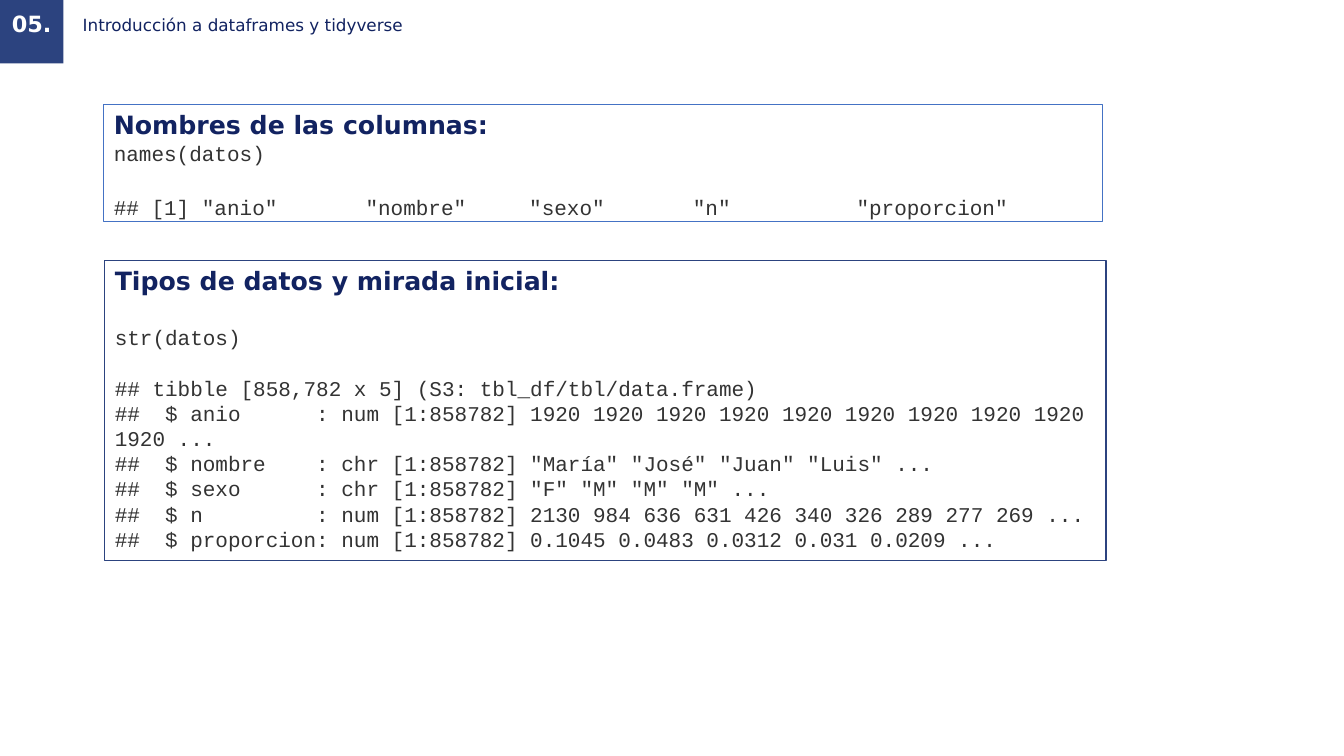
from pptx import Presentation
from pptx.dml.color import RGBColor
from pptx.enum.shapes import MSO_SHAPE
from pptx.enum.text import MSO_ANCHOR, MSO_AUTO_SIZE, PP_ALIGN
from pptx.util import Inches, Pt

NAVY, BLUE, ACCENT, GREY, WHITE = "122361", "2C437F", "4472C4", "333333", "FFFFFF"
HEADING = dict(name="DejaVu Sans", size=Pt(18), bold=True, color=NAVY)
CODE = dict(name="Courier New", size=Pt(15), bold=False, color=GREY)

NAMES_CODE = [
    ("names(datos)", 0),
    ('## [1] "anio"       "nombre"     "sexo"       "n"          "proporcion"', 21),
]
STR_CODE = [
    ("str(datos)", 21),
    ("## tibble [858,782 x 5] (S3: tbl_df/tbl/data.frame)", 18),
    ("##  $ anio      : num [1:858782] 1920 1920 1920 1920 1920 1920 1920 1920 1920 1920 ...", 0),
    ('##  $ nombre    : chr [1:858782] "María" "José" "Juan" "Luis" ...', 0),
    ('##  $ sexo      : chr [1:858782] "F" "M" "M" "M" ...', 0),
    ("##  $ n         : num [1:858782] 2130 984 636 631 426 340 326 289 277 269 ...", 0),
    ("##  $ proporcion: num [1:858782] 0.1045 0.0483 0.0312 0.031 0.0209 ...", 0),
]


def rgb(value):
    """Return the colour for a hex string."""
    return RGBColor.from_string(value)


def add_text(p, text, fmt):
    """Add a run to a paragraph and format it."""
    r = p.add_run()
    r.text = text
    for key, value in fmt.items():
        if key == "color":
            r.font.color.rgb = rgb(value)
        else:
            setattr(r.font, key, value)


def set_frame(tf, **fmt):
    """Set wrapping, no autofit and further text frame values."""
    for key, value in dict(word_wrap=True, auto_size=MSO_AUTO_SIZE.NONE, **fmt).items():
        setattr(tf, key, value)


def add_rect(s, left, top, width, height):
    """Add a rectangle without shadow."""
    sp = s.shapes.add_shape(MSO_SHAPE.RECTANGLE, Inches(left), Inches(top),
                            Inches(width), Inches(height))
    sp.shadow.inherit = False
    return sp


def add_header(s, left, top, side, number, title):
    """Place the numbered square and the slide title beside it."""
    sp = add_rect(s, left, top, side, side)
    sp.fill.solid()
    sp.fill.fore_color.rgb = rgb(BLUE)
    sp.line.fill.background()
    tf = sp.text_frame
    set_frame(tf, vertical_anchor=MSO_ANCHOR.MIDDLE, margin_top=0, margin_bottom=Inches(0.13))
    p = tf.paragraphs[0]
    p.alignment, p.line_spacing = PP_ALIGN.CENTER, 0.9
    add_text(p, number, dict(HEADING, size=Pt(16), color=WHITE))

    ph = s.shapes.title
    ph.left, ph.top = Inches(left + 0.82), Inches(top - 0.01)
    ph.width, ph.height = Inches(11.91), Inches(0.54)
    set_frame(ph.text_frame, vertical_anchor=MSO_ANCHOR.MIDDLE, margin_left=0)
    p = ph.text_frame.paragraphs[0]
    p.alignment, p.line_spacing = PP_ALIGN.LEFT, 0.9
    add_text(p, title, dict(HEADING, size=Pt(12), bold=False))


def add_code_box(s, left, top, width, height, line, heading, code):
    """Place an outlined box with a heading and lines of code."""
    sp = add_rect(s, left, top, width, height)
    sp.fill.background()
    sp.line.color.rgb = rgb(line)
    sp.line.width = Pt(0.75)
    tf = sp.text_frame
    set_frame(tf, vertical_anchor=MSO_ANCHOR.TOP)
    p = tf.paragraphs[0]
    p.alignment = PP_ALIGN.LEFT
    add_text(p, heading, HEADING)
    for text, gap in code:
        p = tf.add_paragraph()
        p.alignment, p.space_before = PP_ALIGN.LEFT, Pt(gap)
        add_text(p, text, CODE)


def main():
    """Build and save the slide."""
    prs = Presentation()
    prs.slide_width, prs.slide_height = Inches(13.33), Inches(7.5)
    s = prs.slides.add_slide(prs.slide_layouts[5])
    add_header(s, 0, 0, 0.63, "05.", "Introducción a dataframes y tidyverse")
    add_code_box(s, 1.03, 1.04, 9.91, 1.16, ACCENT, "Nombres de las columnas:", NAMES_CODE)
    add_code_box(s, 1.04, 2.58, 9.93, 2.98, BLUE, "Tipos de datos y mirada inicial:", STR_CODE)
    prs.save("out.pptx")


if __name__ == "__main__":
    main()
